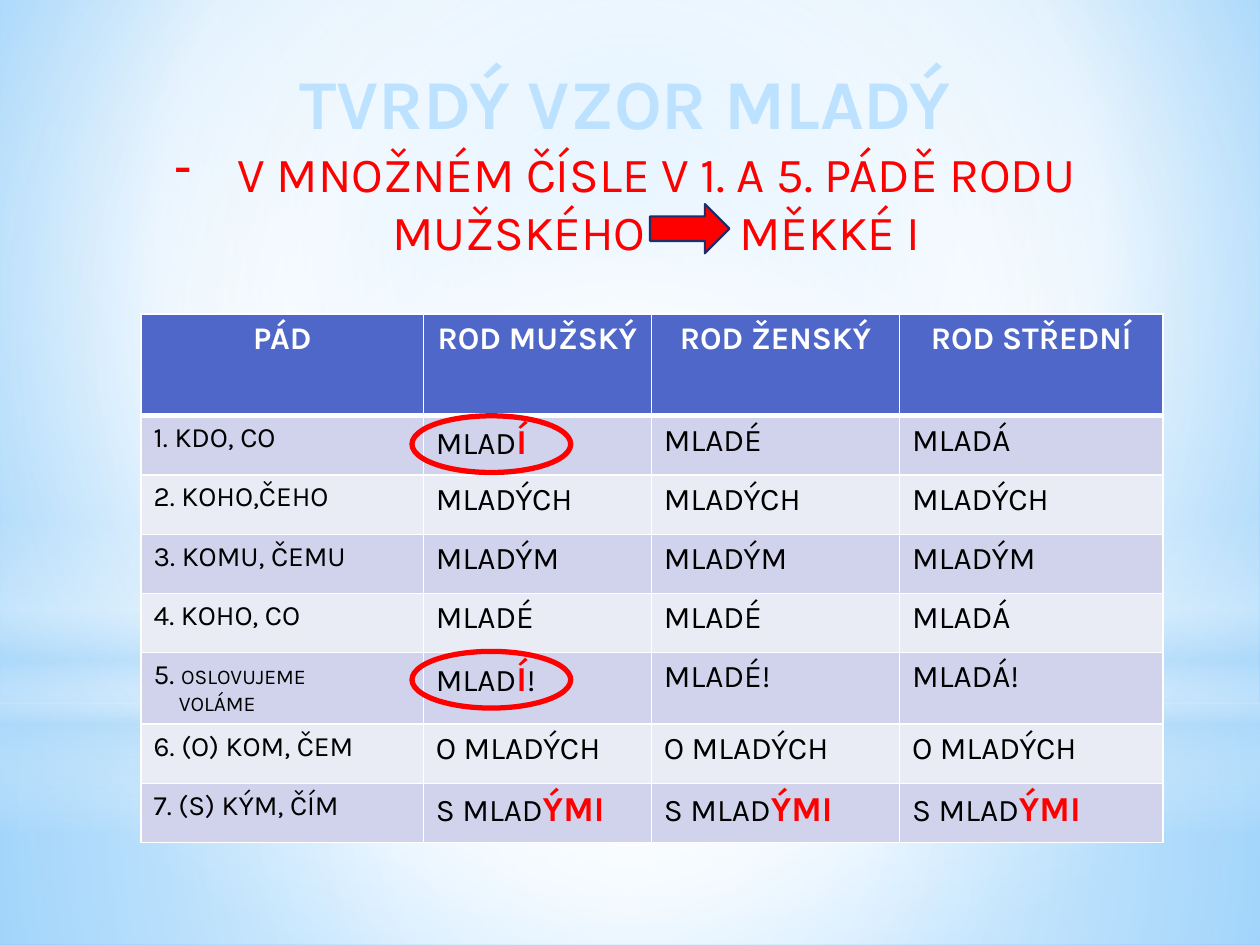
from dataclasses import dataclass
from typing import Optional

from pptx import Presentation
from pptx.dml.color import RGBColor
from pptx.enum.shapes import MSO_SHAPE
from pptx.enum.text import MSO_ANCHOR, PP_ALIGN
from pptx.oxml import parse_xml
from pptx.oxml.ns import nsdecls, qn
from pptx.util import Inches, Pt

WIDTH, HEIGHT = Inches(10), Inches(7.5)
FONT = "Karla"
RED, WHITE, BLACK, SKY = "FF0000", "FFFFFF", "000000", "B4DCFA"
HEADER_FILL, BAND_FILLS = "4E67C8", ("D0D3EB", "E9EBF5")
COLUMN_SHARES = (22.4, 18.1, 19.7, 20.9)
HEADER_SHARE, ROW_SHARE = 10.8, 6.27


@dataclass(frozen=True)
class Frame:
    """Left, top, width and height in percent of the slide."""
    left: float
    top: float
    width: float
    height: float

    def lengths(self) -> tuple:
        """Return the frame in slide units."""
        return (across(self.left), down(self.top),
                across(self.width), down(self.height))


@dataclass(frozen=True)
class Gradient:
    """Stops of position, colour and opacity, with a focus or linear."""
    stops: tuple
    focus: Optional[tuple] = (50, 50, 50, 50)


@dataclass(frozen=True)
class Glow:
    """A soft light panel behind the content."""
    kind: MSO_SHAPE
    frame: Frame
    gradient: Gradient


@dataclass(frozen=True)
class Span:
    """A piece of text in one format."""
    text: str
    size: int = 18
    colour: str = BLACK
    bold: bool = False


BACKDROP = Gradient(((0, "9ED5FF", 100), (60, WHITE, 100), (100, "5BB9FF", 100)),
                    (20, 10, 20, 60))
GLOWS = (
    Glow(MSO_SHAPE.RECTANGLE, Frame(0, 74.4, 100, 25.6),
         Gradient(((0, WHITE, 91), (37, WHITE, 76), (100, SKY, 79)))),
    Glow(MSO_SHAPE.RECTANGLE, Frame(0, 0, 100, 74.4),
         Gradient(((0, WHITE, 89), (48, WHITE, 62), (100, SKY, 79)))),
    Glow(MSO_SHAPE.RECTANGLE, Frame(0, 54.93, 100, 33.33),
         Gradient(((0, WHITE, 0), (29, WHITE, 30), (45, SKY, 40),
                   (55, WHITE, 26), (65, SKY, 60), (100, WHITE, 0)), None)),
    Glow(MSO_SHAPE.OVAL, Frame(0, 23.33, 100, 74.4),
         Gradient(((0, WHITE, 100), (56, WHITE, 0)))),
)
HEADINGS = ("PÁD", "ROD MUŽSKÝ", "ROD ŽENSKÝ", "ROD STŘEDNÍ")
CASES = (
    ("1. KDO, CO", "MLAD|Í", "MLADÉ", "MLADÁ"),
    ("2. KOHO,ČEHO", "MLADÝCH", "MLADÝCH", "MLADÝCH"),
    ("3. KOMU, ČEMU", "MLADÝM", "MLADÝM", "MLADÝM"),
    ("4. KOHO, CO", "MLADÉ", "MLADÉ", "MLADÁ"),
    ("5. |OSLOVUJEME\nVOLÁME", "MLAD|Í|!", "MLADÉ!", "MLADÁ!"),
    ("6. (O) KOM, ČEM", "O MLADÝCH", "O MLADÝCH", "O MLADÝCH"),
    ("7. (S) KÝM, ČÍM", "S MLAD|ÝMI", "S MLAD|ÝMI", "S MLAD|ÝMI"),
)


def across(share: float) -> int:
    """Turn a percentage of the width into a length."""
    return round(WIDTH * share / 100)


def down(share: float) -> int:
    """Turn a percentage of the height into a length."""
    return round(HEIGHT * share / 100)


def colour(value: str) -> RGBColor:
    """Turn a hex string into a colour."""
    return RGBColor.from_string(value)


def paint_gradient(fill, holder, gradient: Gradient) -> None:
    """Give a fill the stops and direction of a gradient."""
    fill.gradient()
    blank = next(holder.iter(qn("a:gradFill")))
    stops = "".join(
        f'<a:gs pos="{place * 1000}"><a:srgbClr val="{tint}">'
        f'<a:alpha val="{opacity * 1000}"/></a:srgbClr></a:gs>'
        for place, tint, opacity in gradient.stops)
    direction = '<a:lin ang="5400000" scaled="0"/>'
    if gradient.focus:
        edges = " ".join(f'{side}="{share * 1000}"'
                         for side, share in zip("ltrb", gradient.focus))
        direction = f'<a:path path="circle"><a:fillToRect {edges}/></a:path>'
    blank.getparent().replace(blank, parse_xml(
        f'<a:gradFill {nsdecls("a")} rotWithShape="1">'
        f'<a:gsLst>{stops}</a:gsLst>{direction}</a:gradFill>'))


def add_figure(page, kind: MSO_SHAPE, frame: Frame, fill: str = "",
               line: str = "", weight: float = 0):
    """Add a preset shape without a shadow."""
    shape = page.shapes.add_shape(kind, *frame.lengths())
    shape.shadow.inherit = False
    if fill:
        shape.fill.solid()
        shape.fill.fore_color.rgb = colour(fill)
    else:
        shape.fill.background()
    if line:
        shape.line.color.rgb = colour(line)
        shape.line.width = Pt(weight)
    else:
        shape.line.fill.background()
    return shape


def add_span(para, span: Span):
    """Add one formatted run to a paragraph."""
    run = para.add_run()
    run.text = span.text
    run.font.name = FONT
    run.font.size = Pt(span.size)
    run.font.bold = span.bold
    run.font.color.rgb = colour(span.colour)
    return run


def add_heading(page) -> None:
    """Add the title and the dashed rule below it."""
    box = page.shapes.add_textbox(*Frame(5.1, 5.6, 89, 109.07).lengths())
    frame = box.text_frame
    frame.word_wrap = True
    frame.vertical_anchor = MSO_ANCHOR.TOP
    title, rule = frame.paragraphs[0], frame.add_paragraph()
    title.alignment = rule.alignment = PP_ALIGN.CENTER
    add_span(title, Span("TVRDÝ VZOR MLADÝ", 40, "BDE2FF", True))
    indent = rule._p.get_or_add_pPr()
    indent.set("marL", str(Inches(0.5)))
    indent.set("indent", str(-Inches(0.5)))
    indent.append(parse_xml(f'<a:buChar {nsdecls("a")} char="-"/>'))
    add_span(rule, Span("V MNOŽNÉM ČÍSLE V 1. A 5. PÁDĚ RODU MUŽSKÉHO", 28, RED))
    gap = add_span(rule, Span(" ", 28, RED))
    gap._r.get_or_add_rPr().set("spc", "4700")
    add_span(rule, Span("MĚKKÉ I", 28, RED))


def style_cell(cell, fill: str, top: int, bottom: int) -> None:
    """Fill a cell and draw its white borders."""
    cell.fill.solid()
    cell.fill.fore_color.rgb = colour(fill)
    borders = (("L", 1), ("R", 1), ("T", top), ("B", bottom))
    for index, (side, weight) in enumerate(borders):
        cell._tc.get_or_add_tcPr().insert(index, parse_xml(
            f'<a:ln{side} {nsdecls("a")} w="{Pt(weight)}"><a:solidFill>'
            f'<a:srgbClr val="{WHITE}"/></a:solidFill></a:ln{side}>'))


def write_label(cell, text: str) -> None:
    """Write the question of a case, with any small explanation."""
    first, _, second = text.partition("\n")
    number, _, note = first.partition("|")
    para = cell.text_frame.paragraphs[0]
    add_span(para, Span(number, 16))
    if note:
        add_span(para, Span(note, 12))
    if second:
        para = cell.text_frame.add_paragraph()
        para._p.get_or_add_pPr().set("marL", str(Inches(0.2)))
        add_span(para, Span(second, 12))


def write_form(cell, text: str) -> None:
    """Write a word form whose second part is a red ending."""
    for index, part in enumerate(text.split("|")):
        span = Span(part, 20, RED, True) if index == 1 else Span(part)
        add_span(cell.text_frame.paragraphs[0], span)


def add_declension(page) -> None:
    """Add the table of cases and genders."""
    frame = Frame(11.2, 33.2, sum(COLUMN_SHARES), HEADER_SHARE + ROW_SHARE * len(CASES))
    table = page.shapes.add_table(len(CASES) + 1, len(HEADINGS), *frame.lengths()).table
    table.horz_banding = False
    for column, share in zip(table.columns, COLUMN_SHARES):
        column.width = across(share)
    for index, row in enumerate(table.rows):
        row.height = down(ROW_SHARE if index else HEADER_SHARE)
    for cell, text in zip(table.rows[0].cells, HEADINGS):
        style_cell(cell, HEADER_FILL, 1, 3)
        para = cell.text_frame.paragraphs[0]
        para.alignment = PP_ALIGN.CENTER
        add_span(para, Span(text, 18, WHITE, True))
    for index, texts in enumerate(CASES):
        for column, text in enumerate(texts):
            cell = table.cell(index + 1, column)
            style_cell(cell, BAND_FILLS[index % 2], 1 if index else 3, 1)
            (write_form if column else write_label)(cell, text)


def main() -> None:
    """Build the slide and save it."""
    deck = Presentation()
    deck.slide_width, deck.slide_height = WIDTH, HEIGHT
    page = deck.slides.add_slide(deck.slide_layouts[6])
    paint_gradient(page.background.fill, page._element, BACKDROP)
    for glow in GLOWS:
        panel = add_figure(page, glow.kind, glow.frame)
        paint_gradient(panel.fill, panel._element, glow.gradient)
    add_heading(page)
    add_declension(page)
    add_figure(page, MSO_SHAPE.RIGHT_ARROW, Frame(51.6, 21.6, 6.3, 5.2), RED, "1F2E69", 1.25)
    for top in (44, 68.93):
        add_figure(page, MSO_SHAPE.OVAL, Frame(32.7, top, 12.6, 6), line=RED, weight=3)
    deck.save("out.pptx")


if __name__ == "__main__":
    main()
